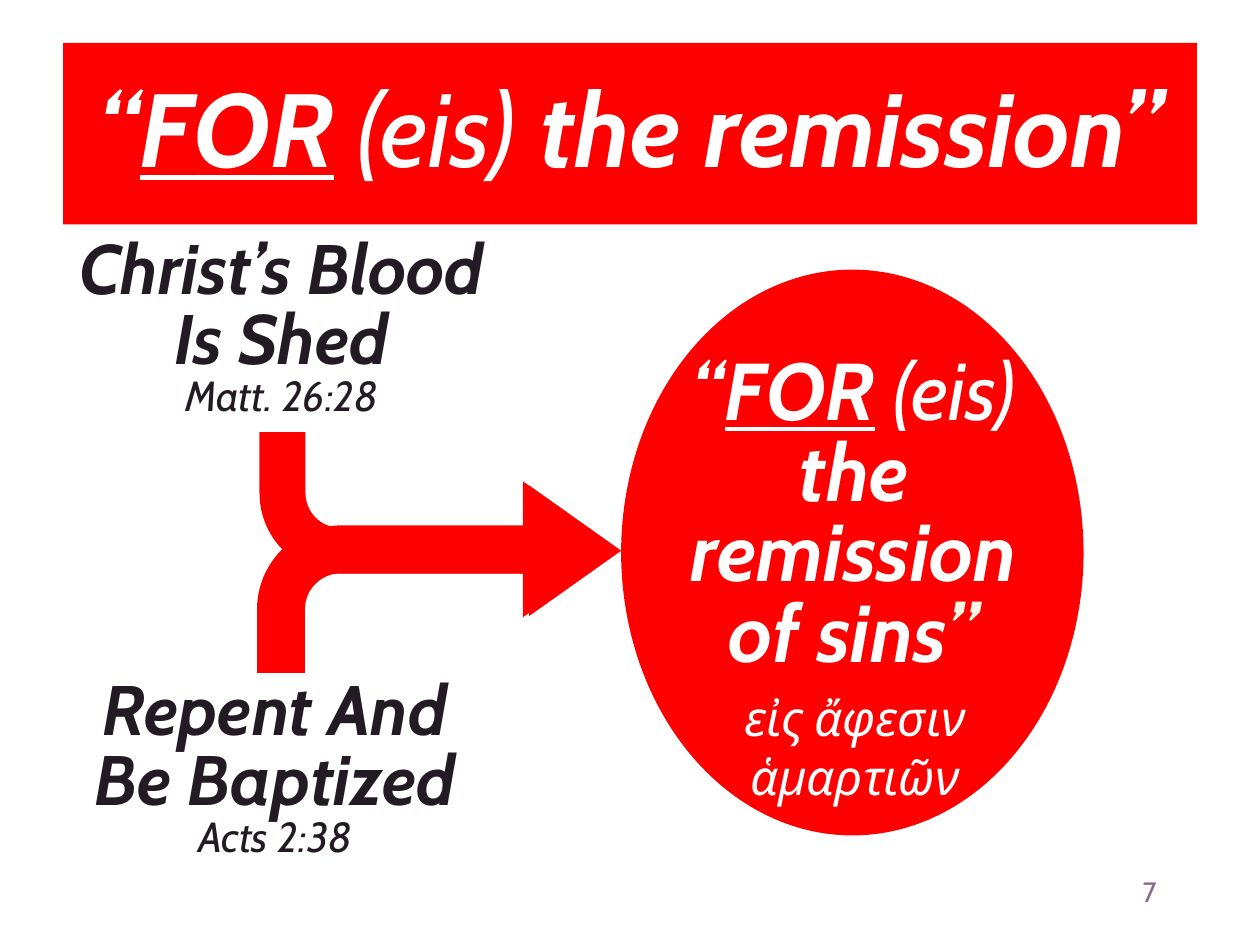
import pptx
import pptx.dml.color
import pptx.enum.shapes
import pptx.enum.text
import pptx.util

Inches = pptx.util.Inches
Pt = pptx.util.Pt
RGBColor = pptx.dml.color.RGBColor
SHAPE = pptx.enum.shapes.MSO_SHAPE
MIDDLE = pptx.enum.text.MSO_ANCHOR.MIDDLE

RED = RGBColor(0xFF, 0x00, 0x00)
WHITE = RGBColor(0xFF, 0xFF, 0xFF)
CREAM = RGBColor(0xFC, 0xF5, 0xE5)
DARK = RGBColor(0x23, 0x1B, 0x23)
PURPLE = RGBColor(0x88, 0x69, 0x88)
FONT = "Cabin"


def format_paragraph(paragraph, size, color, bold=False, italic=True, spacing=None):
    paragraph.alignment = pptx.enum.text.PP_ALIGN.CENTER
    if spacing is not None:
        paragraph.line_spacing = spacing
    font = paragraph.font
    font.name, font.size = FONT, Pt(size)
    font.bold, font.italic = bold, italic
    font.color.rgb = color


def add_text_box(slide, left, top, width, height):
    frame = slide.shapes.add_textbox(
        Inches(left), Inches(top), Inches(width), Inches(height)).text_frame
    frame.word_wrap = True
    return frame


def add_red_shape(slide, preset, left, top, width, height):
    shape = slide.shapes.add_shape(
        preset, Inches(left), Inches(top), Inches(width), Inches(height))
    shape.shadow.inherit = False
    shape.fill.solid()
    shape.fill.fore_color.rgb = RED
    shape.line.fill.background()
    return shape


def add_bent_arrow(slide, left, top, width, height, flipped=False):
    arrow = add_red_shape(slide, SHAPE.BENT_ARROW, left, top, width, height)
    for index, value in enumerate((0.25, 0.355, 0.5, 0.438)):
        arrow.adjustments[index] = value
    if flipped:
        arrow._element.spPr.xfrm.set("flipV", "1")


def write_for_phrase(paragraph, ending):
    """Write “FOR (eis) and the ending, with FOR underlined and (eis) light."""
    paragraph.add_run().text = "“"
    underlined = paragraph.add_run()
    underlined.text = "FOR"
    underlined.font.underline = True
    paragraph.add_run().text = " "
    greek_word = paragraph.add_run()
    greek_word.text = "(eis) "
    greek_word.font.bold = False
    paragraph.add_run().text = ending


def add_cause(slide, left, top, width, height, lines, verse):
    frame = add_text_box(slide, left, top, width, height)
    for index, line in enumerate(lines + [verse]):
        paragraph = frame.add_paragraph() if index else frame.paragraphs[0]
        paragraph.text = line
        size = 24 if line == verse else 40
        format_paragraph(paragraph, size, DARK, bold=line != verse, spacing=Pt(size))


def add_title(slide):
    title = slide.shapes.title
    title.left, title.top = Inches(0.5), Inches(0.34)
    title.width, title.height = Inches(9), Inches(1.44)
    title.fill.solid()
    title.fill.fore_color.rgb = RED
    title.text_frame.vertical_anchor = MIDDLE
    heading = title.text_frame.paragraphs[0]
    format_paragraph(heading, 59.4, WHITE, bold=True, spacing=0.9)
    write_for_phrase(heading, "the remission”")


def add_page_number(slide):
    frame = add_text_box(slide, 8.75, 6.75, 0.75, 0.65)
    frame.vertical_anchor = MIDDLE
    frame.margin_left = frame.margin_right = Inches(0.03)
    frame.paragraphs[0].text = "7"
    format_paragraph(frame.paragraphs[0], 16, PURPLE, italic=False)


def add_result(slide):
    add_red_shape(slide, SHAPE.OVAL, 4.93, 2.14, 3.67, 4.49)
    phrase = add_text_box(slide, 5.24, 2.78, 3.07, 2.69).paragraphs[0]
    format_paragraph(phrase, 46, WHITE, bold=True, spacing=Pt(46))
    write_for_phrase(phrase, "the remission of sins")
    closing_quote = phrase.add_run()
    closing_quote.text = "”"
    closing_quote.font.color.rgb = CREAM

    greek = add_text_box(slide, 5.35, 5.41, 2.87, 1.04).paragraphs[0]
    greek.text = "εἰς ἄφεσιν ἁμαρτιῶν"
    format_paragraph(greek, 28, WHITE)


def main():
    presentation = pptx.Presentation()
    presentation.slide_width = Inches(10)
    presentation.slide_height = Inches(7.5)
    slide = presentation.slides.add_slide(presentation.slide_layouts[5])

    add_title(slide)
    add_page_number(slide)
    add_result(slide)

    # The two causes, above and below the arrows
    add_cause(slide, 0.34, 1.84, 3.79, 1.62, ["Christ’s Blood Is Shed"], "Matt. 26:28")
    add_cause(slide, 0.35, 5.34, 3.67, 1.56, ["Repent And", "Be Baptized"], "Acts 2:38")

    # Arrows merging towards the result
    add_bent_arrow(slide, 2.04, 3.82, 2.87, 1.52)
    add_bent_arrow(slide, 2.06, 3.43, 2.87, 1.46, flipped=True)

    presentation.save("out.pptx")


if __name__ == "__main__":
    main()
